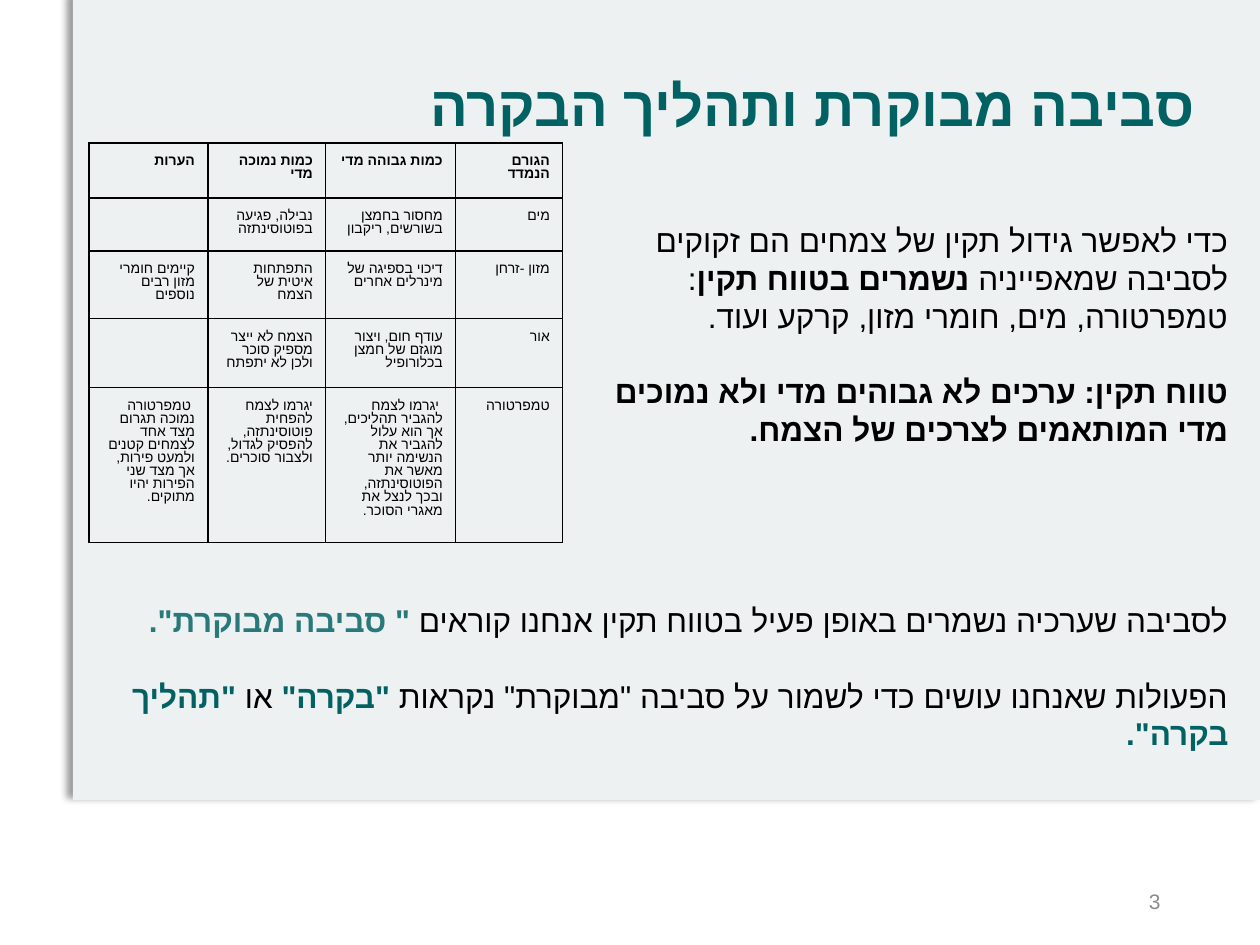
from lxml.etree import SubElement
from pptx import Presentation
from pptx.dml.color import RGBColor
from pptx.enum.shapes import MSO_SHAPE
from pptx.enum.text import MSO_ANCHOR, MSO_AUTO_SIZE, PP_ALIGN
from pptx.oxml.ns import qn
from pptx.util import Pt

PX = 914400 // 126
FONT = "Calibri"
COLORS = {
    "panel": "EEF1F2",
    "teal": "026163",
    "soft_teal": "29797B",
    "black": "000000",
    "gray": "8C8C8C",
}

# Content: each paragraph is a list of (text, color, bold)
TITLE = [[("סביבה מבוקרת ותהליך הבקרה", "teal", True)]]
BODY = [
    [
        ("כדי לאפשר גידול תקין של צמחים הם זקוקים לסביבה שמאפייניה ", "black", False),
        ("נשמרים בטווח תקין", "black", True),
        (": טמפרטורה, מים, חומרי מזון, קרקע ועוד. ", "black", False),
    ],
    [("טווח תקין: ערכים לא גבוהים מדי ולא נמוכים מדי המותאמים לצרכים של הצמח.", "black", True)],
]
SUMMARY = [
    [
        ("לסביבה שערכיה נשמרים באופן פעיל בטווח תקין אנחנו קוראים ", "black", False),
        ('" סביבה מבוקרת".', "soft_teal", True),
    ],
    [
        ('הפעולות שאנחנו עושים כדי לשמור על סביבה "מבוקרת" נקראות ', "black", False),
        ('"בקרה" ', "teal", True),
        ("או ", "black", False),
        ('"תהליך בקרה".', "teal", True),
    ],
]
PAGE_NUMBER = [[("3", "gray", False)]]
TABLE_ROWS = [
    ["הערות", "כמות נמוכה מדי", "כמות גבוהה מדי", "הגורם הנמדד"],
    ["", "נבילה, פגיעה בפוטוסינתזה", "מחסור בחמצן בשורשים, ריקבון", "מים"],
    ["קיימים חומרי מזון רבים נוספים", "התפתחות איטית של הצמח",
     "דיכוי בספיגה של מינרלים אחרים", "מזון -זרחן"],
    ["", "הצמח לא ייצר מספיק סוכר ולכן לא יתפתח",
     "עודף חום, ויצור מוגזם של חמצן בכלורופיל ", "אור"],
    [" טמפרטורה נמוכה תגרום מצד אחד לצמחים קטנים ולמעט פירות, אך מצד שני הפירות יהיו מתוקים. ",
     "יגרמו לצמח להפחית פוטוסינתזה, להפסיק לגדול, ולצבור סוכרים.",
     " יגרמו לצמח להגביר תהליכים, אך הוא עלול להגביר את הנשימה יותר מאשר את הפוטוסינתזה, "
     "ובכך לנצל את מאגרי הסוכר. ",
     "טמפרטורה"],
]
COLUMN_WIDTHS = [119, 118, 130, 107]
ROW_HEIGHTS = [55, 53, 68, 69, 155]
CELL_MARGINS = {"left": 12, "top": 12, "right": 13, "bottom": 12}


def color(name):
    return RGBColor.from_string(COLORS[name])


def place(shape, left, top, width, height):
    for name, value in zip(("left", "top", "width", "height"), (left, top, width, height)):
        setattr(shape, name, value * PX)


def write(frame, paragraphs, size, gap=0, line_spacing=1.0):
    """Fill a text frame with right-to-left paragraphs."""
    for index, runs in enumerate(paragraphs):
        para = frame.paragraphs[0] if index == 0 else frame.add_paragraph()
        properties = para._p.get_or_add_pPr()
        for name, value in {"rtl": "1", "marL": "0", "indent": "0"}.items():
            properties.set(name, value)
        SubElement(properties, qn("a:buNone"))
        layout = {
            "alignment": PP_ALIGN.RIGHT,
            "line_spacing": line_spacing,
            "space_before": Pt(gap if index else 0),
            "space_after": Pt(0),
        }
        for name, value in layout.items():
            setattr(para, name, value)
        for text, color_name, bold in runs:
            if not text:
                SubElement(para._p, qn("a:endParaRPr"), sz=str(size * 100))
                continue
            span = para.add_run()
            span.text = text
            for name, value in {"name": FONT, "size": Pt(size), "bold": bold}.items():
                setattr(span.font, name, value)
            span.font.color.rgb = color(color_name)
            # Right-to-left text takes the complex-script face
            SubElement(span.font._element, qn("a:cs"), typeface="Arial")


def add_borders(cell):
    properties = cell._tc.get_or_add_tcPr()
    for position, side in enumerate(("a:lnL", "a:lnR", "a:lnT", "a:lnB")):
        line = SubElement(properties, qn(side), w=str(Pt(0.75)))
        fill = SubElement(line, qn("a:solidFill"))
        SubElement(fill, qn("a:srgbClr"), val=COLORS["black"])
        properties.insert(position, line)


deck = Presentation()
deck.slide_width, deck.slide_height = 1260 * PX, 945 * PX
page = deck.slides.add_slide(deck.slide_layouts[1])
title, body = page.placeholders

# Background panel, behind the placeholders
panel = page.shapes.add_shape(MSO_SHAPE.RECTANGLE, 73 * PX, -4 * PX, 1187 * PX, 804 * PX)
panel.fill.solid()
panel.fill.fore_color.rgb = color("panel")
panel.line.fill.background()
panel.shadow.inherit = False
shadow = SubElement(panel._element.spPr.find(qn("a:effectLst")), qn("a:outerShdw"),
                    blurRad=str(Pt(4)), dist=str(Pt(3)), dir="10800000", rotWithShape="0")
shade = SubElement(shadow, qn("a:srgbClr"), val=COLORS["black"])
SubElement(shade, qn("a:alpha"), val="40000")
title._element.addprevious(panel._element)

# Title, body, summary and page number
summary = page.shapes.add_textbox(0, 0, 0, 0)
number = page.shapes.add_textbox(0, 0, 0, 0)
texts = [
    (title, (87, 29, 1121, 159), MSO_ANCHOR.MIDDLE, TITLE, {"size": 32, "line_spacing": 0.9}),
    (body, (567, 215, 674, 263), MSO_ANCHOR.TOP, BODY, {"size": 18, "gap": 21.5}),
    (summary, (34, 595, 1207, 127), MSO_ANCHOR.TOP, SUMMARY, {"size": 18, "gap": 21.5}),
    (number, (890, 876, 283, 50), MSO_ANCHOR.MIDDLE, PAGE_NUMBER, {"size": 12}),
]
for box, area, anchor, paragraphs, style in texts:
    place(box, *area)
    frame = box.text_frame
    frame.word_wrap = True
    frame.auto_size = MSO_AUTO_SIZE.NONE
    frame.vertical_anchor = anchor
    write(frame, paragraphs, **style)

# Table of measured factors
table = page.shapes.add_table(
    len(ROW_HEIGHTS), len(COLUMN_WIDTHS), 89 * PX, 143 * PX,
    sum(COLUMN_WIDTHS) * PX, sum(ROW_HEIGHTS) * PX).table
table.first_row = table.horz_banding = False
for column, width in zip(table.columns, COLUMN_WIDTHS):
    column.width = width * PX
for row_index, (row, height, texts_in_row) in enumerate(zip(table.rows, ROW_HEIGHTS, TABLE_ROWS)):
    row.height = height * PX
    for cell, text in zip(row.cells, texts_in_row):
        for side, margin in CELL_MARGINS.items():
            setattr(cell, f"margin_{side}", margin * PX)
        cell.fill.background()
        add_borders(cell)
        write(cell.text_frame, [[(text, "black", row_index == 0)]], size=8, line_spacing=0.83)

deck.save("out.pptx")
